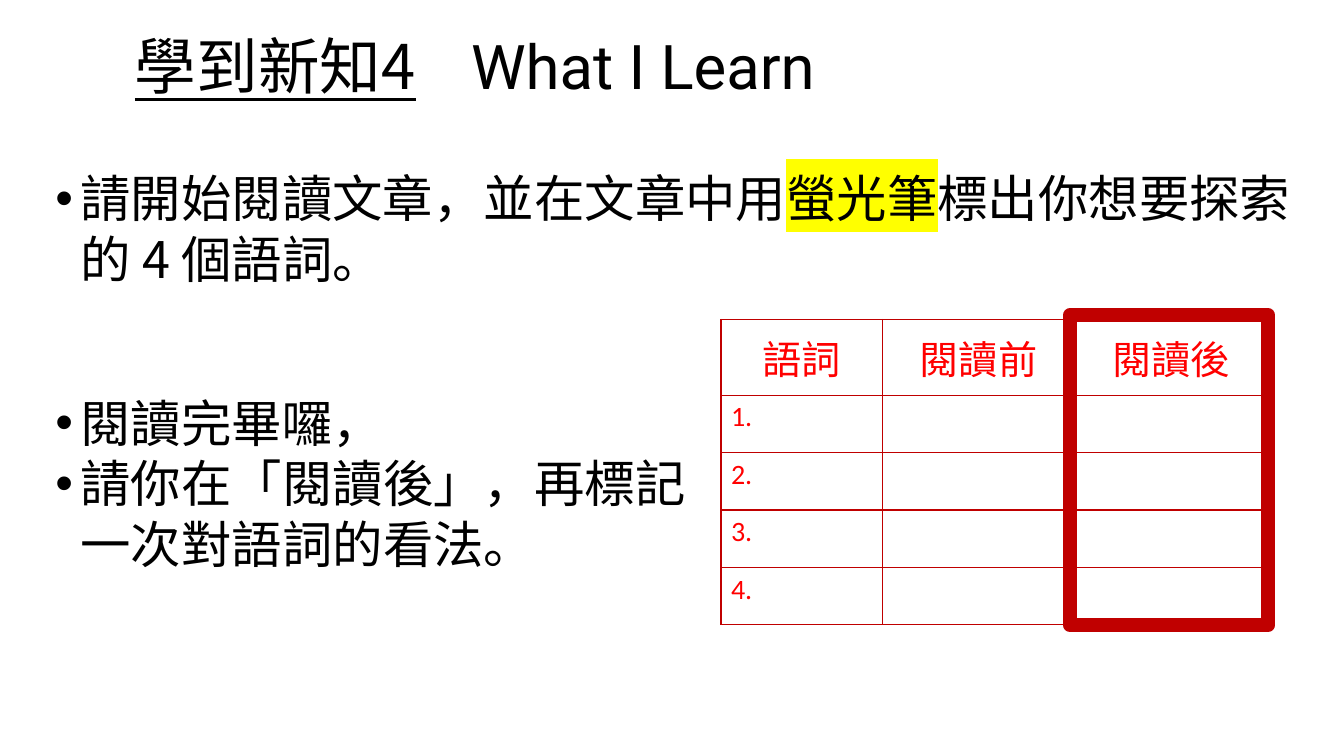
from lxml import etree
from pptx import Presentation, util as u
from pptx.dml.color import RGBColor
from pptx.enum import shapes, text
from pptx.oxml.ns import qn

CJK, LATIN, TABLE = "Noto Sans CJK SC", "Roboto", "Calibri"
BLACK, RED, DARK_RED, YELLOW = "000000", "FF0000", "C00000", "FFFF00"


def rgb(value):
    return RGBColor.from_string(value)


def child(parent, tag, **values):
    return etree.SubElement(parent, qn(f"a:{tag}"), values)


def apply(target, **values):
    for name, value in values.items():
        setattr(target, name, value)


class Page:
    """Places elements on one slide; lengths are percentages of its size."""

    def __init__(self, deck):
        self.width, self.height = deck.slide_width, deck.slide_height
        self.shapes = deck.slides.add_slide(deck.slide_layouts[6]).shapes

    def x(self, share):
        return u.Emu(round(self.width * share / 100))

    def y(self, share):
        return u.Emu(round(self.height * share / 100))

    def place(self, left, top, width, height):
        return self.x(left), self.y(top), self.x(width), self.y(height)

    def span(self, para, words, size, font=CJK, color=BLACK, highlight=None, **format):
        span = para.add_run()
        span.text = words
        apply(span.font, size=u.Pt(size), **format)
        span.font.color.rgb = rgb(color)
        properties = span.font._element
        if highlight:
            child(child(properties, "highlight"), "srgbClr", val=highlight)
        span.font.name = font
        child(properties, "ea", typeface=CJK)

    def text_box(self, place, anchor=text.MSO_ANCHOR.TOP):
        frame = self.shapes.add_textbox(*self.place(*place)).text_frame
        apply(frame, word_wrap=True, vertical_anchor=anchor)
        return frame

    def title(self, place, spans):
        para = self.text_box(place, text.MSO_ANCHOR.MIDDLE).paragraphs[0]
        para.line_spacing = 0.9
        for words, format in spans:
            self.span(para, words, 44, **format)

    def bullets(self, place, items):
        """Each item is a list of (words, highlight) pairs."""
        frame = self.text_box(place)
        for index, item in enumerate(items):
            para = frame.add_paragraph() if index else frame.paragraphs[0]
            para.line_spacing = 1.0
            properties = para._p.get_or_add_pPr()
            indent = u.Inches(0.25)
            properties.set("marL", str(indent))
            properties.set("indent", str(-indent))
            child(properties, "buFont", typeface="Arial")
            child(properties, "buChar", char="•")
            for words, highlight in item:
                self.span(para, words, 36, highlight=highlight)

    def cell(self, cell, words, heading):
        properties = cell._tc.get_or_add_tcPr()
        for side in "LRTB":
            line = child(properties, f"ln{side}", w=str(u.Pt(1)))
            child(child(line, "solidFill"), "srgbClr", val=DARK_RED)
        cell.fill.background()
        para = cell.text_frame.paragraphs[0]
        if heading:
            cell.vertical_anchor = text.MSO_ANCHOR.MIDDLE
            para.alignment = text.PP_ALIGN.CENTER
        if words:
            self.span(para, words, 28 if heading else 20, TABLE, RED)

    def table(self, left, top, columns, rows, content):
        place = self.place(left, top, sum(columns), sum(rows))
        table = self.shapes.add_table(len(rows), len(columns), *place).table
        apply(table, first_row=False, horz_banding=False)
        for column, width in zip(table.columns, columns):
            column.width = self.x(width)
        for row, height in zip(table.rows, rows):
            row.height = self.y(height)
        for r, line in enumerate(content):
            for c, words in enumerate(line):
                self.cell(table.cell(r, c), words, heading=r == 0)

    def frame(self, place, color, weight):
        """Draws an unfilled rectangle with rounded line joins."""
        shape = self.shapes.add_shape(shapes.MSO_SHAPE.RECTANGLE, *self.place(*place))
        shape.shadow.inherit = False
        shape.fill.background()
        shape.line.color.rgb = rgb(color)
        shape.line.width = u.Pt(weight)
        child(shape.line._get_or_add_ln(), "round")


def main():
    deck = Presentation()
    apply(deck, slide_width=u.Inches(13.33), slide_height=u.Inches(7.5))
    page = Page(deck)
    page.title((9.3, 4, 61.5, 10.53), [
        ("學到新知4", {"underline": True}),
        ("\u0020" * 4, {}),
        ("What I Learn", {"font": LATIN}),
    ])
    page.bullets((3.38, 21.47, 94.07, 20.27), [[
        ("請開始閱讀文章，並在文章中用", None),
        ("螢光筆", YELLOW),
        ("標出你想要探索的 4 個語詞。", None),
    ]])
    words = [["語詞", "閱讀前", "閱讀後"]]
    words += [[f"{number}.", "", ""] for number in range(1, 5)]
    page.table(53.64, 42.27, [12, 14.33, 14.33], [10] + [7.6] * 4, words)
    page.frame((79.6, 41.73, 14.78, 40.93), DARK_RED, 10)
    page.bullets((3.38, 51.2, 50.26, 37.07), [
        [("閱讀完畢囉，", None)],
        [("請你在「閱讀後」，再標記一次對語詞的看法。", None)],
    ])
    deck.save("out.pptx")


if __name__ == "__main__":
    main()
